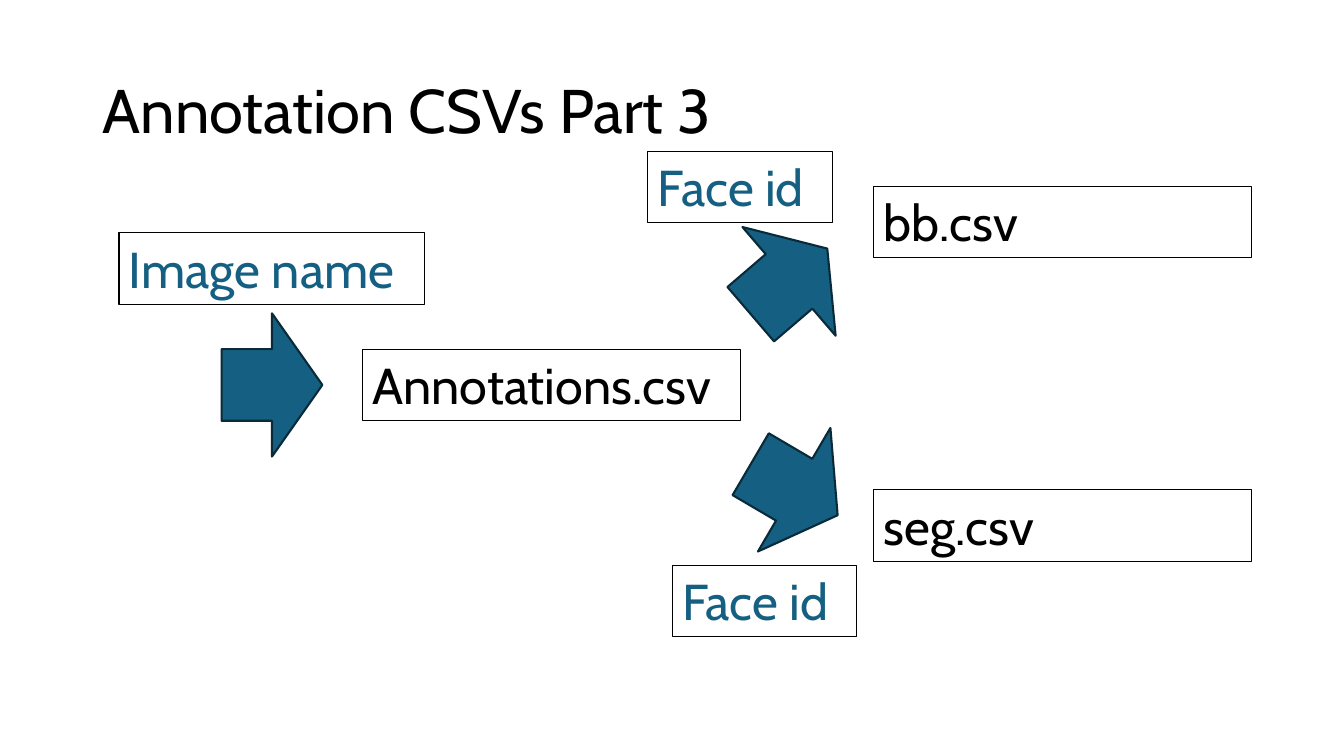
from pptx import Presentation
from pptx.dml.color import RGBColor
from pptx.enum.shapes import MSO_SHAPE
from pptx.enum.text import MSO_ANCHOR, MSO_AUTO_SIZE
from pptx.util import Cm, Pt

DOWN_ARROW = MSO_SHAPE.DOWN_ARROW
TOP, MIDDLE = MSO_ANCHOR.TOP, MSO_ANCHOR.MIDDLE
GROW = MSO_AUTO_SIZE.SHAPE_TO_FIT_TEXT
BLACK = RGBColor(0x00, 0x00, 0x00)
BLUE = RGBColor(0x15, 0x60, 0x82)
NAVY = RGBColor(0x09, 0x2A, 0x39)
FONT = "Cabin"
BOX_HEIGHT = 1.8
FILE_WIDTH, KEY_WIDTH = 9.53, 4.65
OUTPUT_LEFT = 22.02


def add_text(slide, text, left, top, width, height, size, color, anchor=TOP):
    """Add a wrapped text box with one line of text."""
    sp = slide.shapes.add_textbox(Cm(left), Cm(top), Cm(width), Cm(height))
    tf = sp.text_frame
    tf.word_wrap = True
    tf.vertical_anchor = anchor
    tf.text = text
    font = tf.paragraphs[0].runs[0].font
    font.name = FONT
    font.size = Pt(size)
    font.color.rgb = color
    return sp


def add_title(slide, text):
    """Add the slide title."""
    sp = add_text(slide, text, 2.34, 1.02, 29.21, 3.68, 44, BLACK, MIDDLE)
    sp.text_frame.paragraphs[0].line_spacing = 0.9


def add_label(slide, text, left, top, width, color):
    """Add a label with a thin black outline."""
    sp = add_text(slide, text, left, top, width, BOX_HEIGHT, 36, color)
    sp.text_frame.auto_size = GROW
    sp.line.color.rgb = BLACK
    sp.line.width = Pt(0.75)


def add_arrow(slide, left, top, rotation):
    """Add a rotated block arrow."""
    sp = slide.shapes.add_shape(DOWN_ARROW, Cm(left), Cm(top), Cm(3.61), Cm(2.54))
    sp.rotation = rotation
    sp.shadow.inherit = False
    sp.fill.solid()
    sp.fill.fore_color.rgb = BLUE
    sp.line.color.rgb = NAVY
    sp.line.width = Pt(1.5)


def main():
    """Build the slide and save it."""
    prs = Presentation()
    prs.slide_width, prs.slide_height = Cm(33.87), Cm(19.05)
    s = prs.slides.add_slide(prs.slide_layouts[6])
    add_title(s, "Annotation CSVs Part 3")
    for left, top, rotation in (
        (5.05, 8.43, 270),
        (18.08, 5.82, 229.4),
        (18.21, 11.07, 300.4),
    ):
        add_arrow(s, left, top, rotation)
    for text, left, top in (
        ("Annotations.csv", 9.14, 8.81),
        ("bb.csv", OUTPUT_LEFT, 4.7),
        ("seg.csv", OUTPUT_LEFT, 12.34),
    ):
        add_label(s, text, left, top, FILE_WIDTH, BLACK)
    for text, left, top, width in (
        ("Image name", 3, 5.87, 7.7),
        ("Face id", 16.33, 3.81, KEY_WIDTH),
        ("Face id", 16.94, 14.25, KEY_WIDTH),
    ):
        add_label(s, text, left, top, width, BLUE)
    prs.save("out.pptx")


if __name__ == "__main__":
    main()
